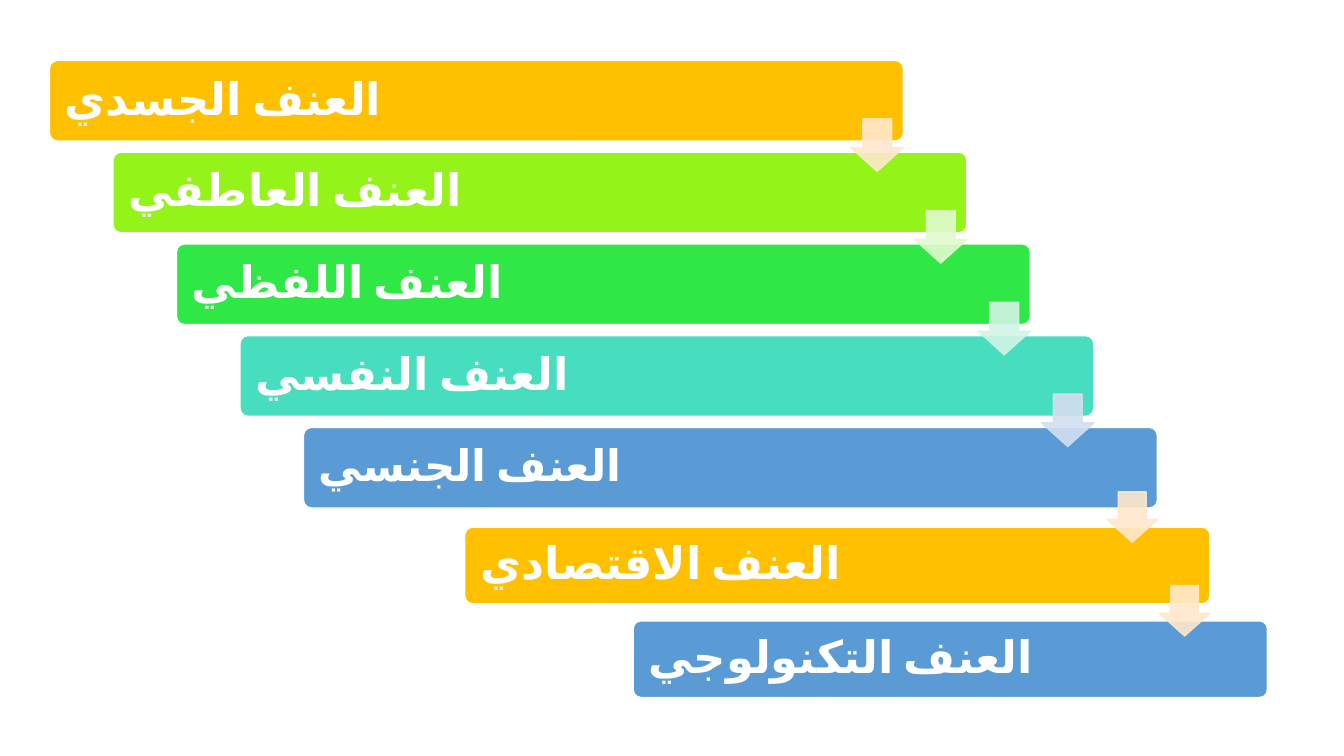
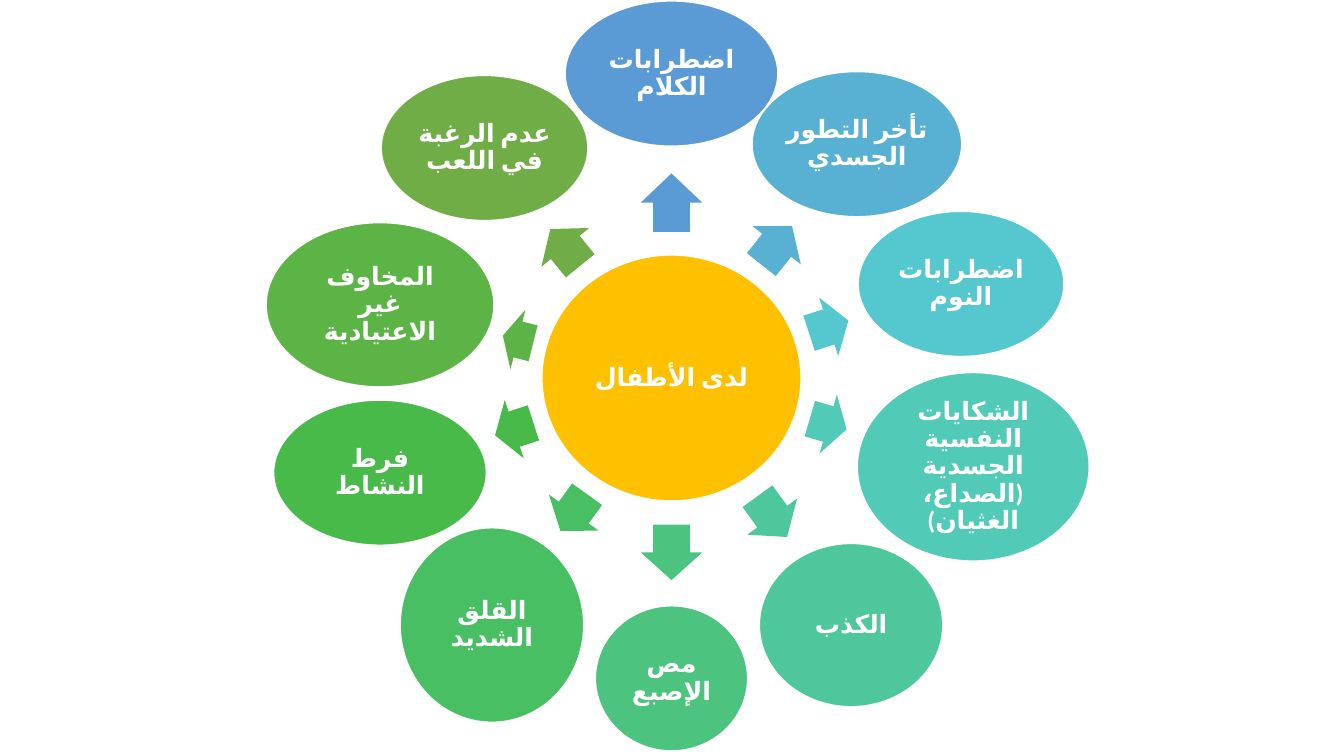
from dataclasses import dataclass
from math import cos, radians, sin

from lxml.etree import SubElement
from pptx import Presentation
from pptx.dml.color import RGBColor
from pptx.enum.lang import MSO_LANGUAGE_ID as LANG
from pptx.enum.shapes import MSO_SHAPE as SHAPE
from pptx.enum.text import MSO_ANCHOR as ANCHOR, PP_ALIGN as ALIGN
from pptx.oxml.ns import qn
from pptx.shapes.autoshape import Shape
from pptx.slide import Slide
from pptx.util import Inches, Pt

FONT = "Calibri"
WHITE = RGBColor(0xFF, 0xFF, 0xFF)
AMBER = RGBColor(0xFF, 0xC0, 0x00)
LIME = RGBColor(0x94, 0xF3, 0x19)
GREEN = RGBColor(0x30, 0xE8, 0x45)
TURQUOISE = RGBColor(0x46, 0xDE, 0xBF)
BLUE = RGBColor(0x5B, 0x9B, 0xD5)
PALE_AMBER = RGBColor(0xFF, 0xE8, 0xCC)
PALE_LIME = RGBColor(0xE1, 0xFA, 0xCE)
PALE_GREEN = RGBColor(0xD0, 0xF5, 0xE5)
PALE_BLUE = RGBColor(0xD2, 0xDF, 0xF0)
SKY = RGBColor(0x58, 0xB1, 0xD2)
CYAN = RGBColor(0x55, 0xC7, 0xCE)
TEAL = RGBColor(0x52, 0xCA, 0xB8)
SEA = RGBColor(0x4F, 0xC7, 0x9C)
MINT = RGBColor(0x4C, 0xC3, 0x7F)
EMERALD = RGBColor(0x49, 0xBF, 0x64)
GRASS = RGBColor(0x47, 0xBA, 0x49)
LEAF = RGBColor(0x5C, 0xB4, 0x47)
OLIVE = RGBColor(0x70, 0xAD, 0x47)

STAIR_LEFT, STAIR_TOP = 0.49, 0.6
STEP_X, STEP_Y = 0.63, 0.91
BAR_W, BAR_H = 8.47, 0.8
HUB_X, HUB_Y = 6.66, 3.75
ARROW_SPAN = 0.61


@dataclass(frozen=True)
class Bar:
    text: str
    fill: RGBColor
    left: float
    top: float
    width: float = BAR_W
    height: float = BAR_H
    size: int = 32


@dataclass(frozen=True)
class StairArrow:
    """Arrow at the right end of a bar, starting `drop` below its top."""
    color: RGBColor
    size: float = 0.52
    drop: float = 0.58


@dataclass(frozen=True)
class Petal:
    """Ellipse and arrow on one ray from the hub; reaches are to their centres."""
    text: str
    fill: RGBColor
    angle: float
    width: float
    height: float
    reach: float
    arrow_reach: float
    arrow_length: float


STAIR = [
    ("العنف الجسدي", AMBER, 32),
    ("العنف العاطفي", LIME, 32),
    ("العنف اللفظي", GREEN, 32),
    ("العنف النفسي", TURQUOISE, 32),
    ("العنف الجنسي", BLUE, 31),
]
BARS = [
    Bar(text, fill, STAIR_LEFT + i * STEP_X, STAIR_TOP + i * STEP_Y, size=size)
    for i, (text, fill, size) in enumerate(STAIR)
] + [
    Bar("العنف الاقتصادي", AMBER, 4.61, 5.23, 7.39, 0.76),
    Bar("العنف التكنولوجي", BLUE, 6.28, 6.16, 6.29, 0.76),
]
STAIR_ARROWS = [
    StairArrow(PALE_AMBER),
    StairArrow(PALE_LIME),
    StairArrow(PALE_GREEN),
    StairArrow(PALE_BLUE),
    StairArrow(PALE_AMBER, 0.5, 0.64),
    StairArrow(PALE_AMBER, 0.5, 0.58),
]
PETALS = [
    Petal("اضطرابات الكلام", BLUE, 270, 2.11, 1.44, 3.02, 1.74, 0.58),
    Petal("تأخر التطور الجسدي", SKY, 308.4, 2.08, 1.44, 2.96, 1.68, 0.49),
    Petal("اضطرابات النوم", CYAN, 342, 2.04, 1.44, 3.02, 1.64, 0.41),
    Petal("الشكايات النفسية الجسدية (الصداع، الغثيان)", TEAL,
          16.4, 2.3, 1.87, 3.12, 1.62, 0.38),
    Petal("الكذب", SEA, 54, 1.82, 1.62, 3.03, 1.7, 0.5),
    Petal("مص الإصبع", MINT, 90, 1.51, 1.44, 2.98, 1.73, 0.55),
    Petal("القلق الشديد", EMERALD, 126, 1.82, 1.93, 3.03, 1.65, 0.45),
    Petal("فرط النشاط", GRASS, 162, 2.11, 1.44, 3.04, 1.64, 0.4),
    Petal("المخاوف غير الاعتيادية", LEAF, 194.1, 2.26, 1.63, 2.98, 1.57, 0.31),
    Petal("عدم الرغبة في اللعب", OLIVE, 230.9, 2.05, 1.44, 2.94, 1.67, 0.47),
]


def add_block(s: Slide, kind: SHAPE, left: float, top: float, width: float,
              height: float, fill: RGBColor, line: RGBColor | None = None,
              adjustments: tuple[float, ...] = ()) -> Shape:
    sp = s.shapes.add_shape(kind, Inches(left), Inches(top),
                            Inches(width), Inches(height))
    sp.shadow.inherit = False
    sp.fill.solid()
    sp.fill.fore_color.rgb = fill
    if line is None:
        sp.line.fill.background()
    else:
        sp.line.color.rgb = line
        sp.line.width = Pt(1)
    for i, value in enumerate(adjustments):
        sp.adjustments[i] = value
    return sp


def set_label(sp: Shape, text: str, size: int, align: ALIGN, inset: float) -> None:
    tf = sp.text_frame
    tf.text = text
    tf.word_wrap = True
    tf.vertical_anchor = ANCHOR.MIDDLE
    tf.margin_left = tf.margin_right = Inches(inset)
    tf.margin_top = tf.margin_bottom = Inches(inset)
    p = tf.paragraphs[0]
    p.alignment = align
    p.line_spacing = 0.9
    r = p.runs[0]
    r.font.name = FONT
    r.font.size = Pt(size)
    r.font.bold = True
    r.font.color.rgb = WHITE
    r.font.language_id = LANG.ARABIC
    # Arabic takes the complex-script font
    SubElement(r.font._element, qn("a:cs"), typeface=FONT)


def set_opacity(sp: Shape, percent: int) -> None:
    """Apply to both the fill and the line."""
    for color in sp._element.spPr.iter(qn("a:srgbClr")):
        SubElement(color, qn("a:alpha"), val=str(percent * 1000))


def add_bar(s: Slide, bar: Bar) -> None:
    sp = add_block(s, SHAPE.ROUNDED_RECTANGLE, bar.left, bar.top, bar.width,
                   bar.height, bar.fill, WHITE, (0.1,))
    set_label(sp, bar.text, bar.size, ALIGN.LEFT, 0.13)


def add_stair_arrow(s: Slide, bar: Bar, arrow: StairArrow) -> None:
    # Arrow adjustments: shaft width, then head length
    sp = add_block(s, SHAPE.DOWN_ARROW, bar.left + bar.width - arrow.size,
                   bar.top + arrow.drop, arrow.size, arrow.size,
                   arrow.color, arrow.color, (0.55, 0.45))
    set_opacity(sp, 90)


def on_ray(angle: float, reach: float, width: float,
           height: float) -> tuple[float, float, float, float]:
    """Box centred at a distance from the hub, clockwise from the right."""
    x = HUB_X + reach * cos(radians(angle))
    y = HUB_Y + reach * sin(radians(angle))
    return x - width / 2, y - height / 2, width, height


def add_ellipse(s: Slide, box: tuple[float, float, float, float],
                fill: RGBColor, text: str) -> None:
    sp = add_block(s, SHAPE.OVAL, *box, fill, WHITE)
    set_label(sp, text, 18, ALIGN.CENTER, 0.03)


def add_petal(s: Slide, petal: Petal) -> None:
    arrow_box = on_ray(petal.angle, petal.arrow_reach, petal.arrow_length, ARROW_SPAN)
    arrow = add_block(s, SHAPE.RIGHT_ARROW, *arrow_box, petal.fill,
                      adjustments=(0.6, 0.5))
    arrow.rotation = petal.angle
    box = on_ray(petal.angle, petal.reach, petal.width, petal.height)
    add_ellipse(s, box, petal.fill, petal.text)


def build_stair(s: Slide) -> None:
    for bar in BARS:
        add_bar(s, bar)
    for bar, arrow in zip(BARS, STAIR_ARROWS):
        add_stair_arrow(s, bar, arrow)


def build_wheel(s: Slide) -> None:
    add_ellipse(s, on_ray(0, 0, 2.57, 2.44), AMBER, "لدى الأطفال")
    for petal in PETALS:
        add_petal(s, petal)


def main() -> None:
    prs = Presentation()
    prs.slide_width, prs.slide_height = Inches(13.33), Inches(7.5)
    blank = prs.slide_layouts[6]
    for build in (build_stair, build_wheel):
        build(prs.slides.add_slide(blank))
    prs.save("out.pptx")


if __name__ == "__main__":
    main()
